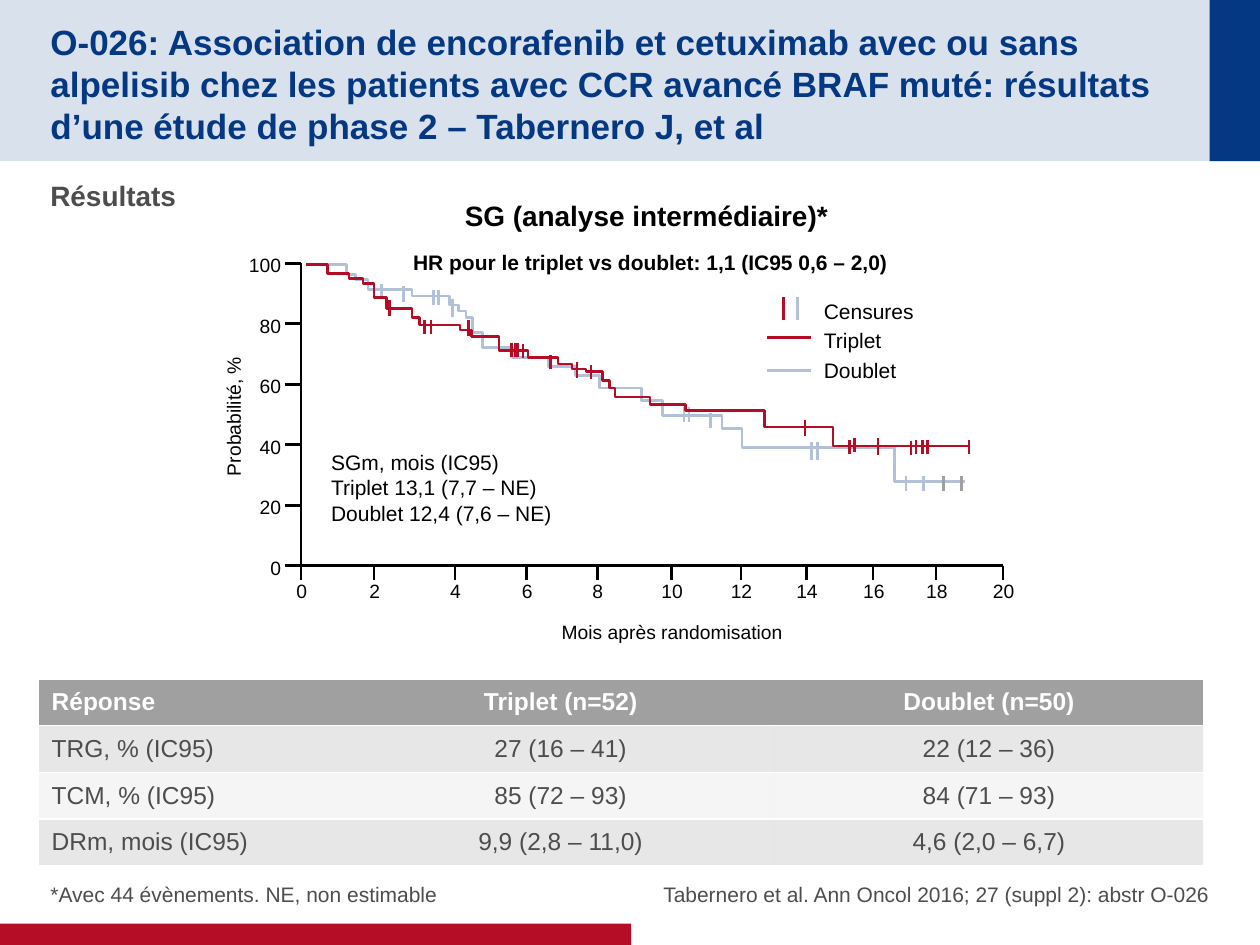
from lxml.etree import SubElement, Element
from pptx import Presentation
from pptx.dml.color import RGBColor
from pptx.enum.shapes import MSO_CONNECTOR, MSO_SHAPE
from pptx.enum.text import MSO_ANCHOR, PP_ALIGN
from pptx.oxml.ns import qn
from pptx.util import Cm, Pt

NAVY = RGBColor(0x04, 0x38, 0x82)
RED = RGBColor(0xB6, 0x0D, 0x27)
PALE_BLUE = RGBColor(0xB2, 0xC0, 0xD8)
GREY = RGBColor(0xA0, 0xA0, 0xA0)
DARK_GREY = RGBColor(0x4D, 0x4D, 0x4D)
BLACK = RGBColor(0, 0, 0)
WHITE = RGBColor(0xFF, 0xFF, 0xFF)

AXIS_LEFT, AXIS_TOP, AXIS_BOTTOM = 2.39, 2.09, 4.49
MONTH_TICKS = [2.39, 2.97, 3.61, 4.18, 4.74, 5.33, 5.88, 6.4, 6.93, 7.43, 7.96]
CURVE_START = (2.43, 2.1)

DOUBLET_STEPS = [
    (2.75, 2.18), (2.82, 2.22), (2.92, 2.3), (3.27, 2.35), (3.57, 2.42),
    (3.64, 2.47), (3.7, 2.52), (3.75, 2.64), (3.83, 2.76), (4.07, 2.84),
    (4.35, 2.91), (4.57, 2.98), (4.76, 3.08), (5.09, 3.18), (5.26, 3.3),
    (5.73, 3.4), (5.89, 3.55), (7.1, 3.82)]
TRIPLET_STEPS = [
    (2.6, 2.17), (2.77, 2.21), (2.88, 2.25), (2.97, 2.36), (3.07, 2.45),
    (3.27, 2.52), (3.33, 2.58), (3.65, 2.62), (3.74, 2.67), (3.96, 2.78),
    (4.19, 2.84), (4.43, 2.89), (4.54, 2.93), (4.65, 2.95), (4.78, 3.02),
    (4.84, 3.08), (4.88, 3.15), (5.16, 3.21), (5.44, 3.26), (6.07, 3.39),
    (6.61, 3.54)]

DOUBLET_CENSORS = {
    (2.25, 2.37): [3.03], (2.27, 2.4): [3.2], (2.3, 2.42): [3.44, 3.48],
    (2.37, 2.52): [3.59], (3.23, 3.35): [5.43, 5.47], (3.28, 3.4): [5.64],
    (3.51, 3.65): [6.44, 6.49], (3.78, 3.9): [7.19, 7.33]}
LATE_CENSORS = {(3.78, 3.9): [7.49, 7.63]}
TRIPLET_CENSORS = {
    (2.38, 2.51): [3.09], (2.54, 2.65): [3.37, 3.42], (2.54, 2.67): [3.72],
    (2.72, 2.83): [4.06, 4.09, 4.11], (2.73, 2.84): [4.15],
    (2.82, 2.93): [4.37], (2.87, 3): [4.58], (2.9, 3.01): [4.69],
    (3.33, 3.46): [6.39], (3.48, 3.59): [6.78], (3.48, 3.61): [6.97],
    (3.49, 3.6): [6.74, 7.27, 7.32, 7.36, 7.69], (3.5, 3.61): [7.23]}

RESPONSES = [
    ("Réponse", "Triplet (n=52)", "Doublet (n=50)"),
    ("TRG, % (IC95)", "27 (16 – 41)", "22 (12 – 36)"),
    ("TCM, % (IC95)", "85 (72 – 93)", "84 (71 – 93)"),
    ("DRm, mois (IC95)", "9,9 (2,8 – 11,0)", "4,6 (2,0 – 6,7)")]


def length(inches):
    return Cm(inches * 2.54)


def write(frame, text, size=11, color=BLACK, bold=False, align=PP_ALIGN.LEFT,
          spacing=None, before=None, after=None):
    for index, line in enumerate(text.split("\n")):
        paragraph = frame.add_paragraph() if index else frame.paragraphs[0]
        paragraph.alignment = align
        paragraph.line_spacing = spacing
        paragraph.space_before = before
        paragraph.space_after = after
        run = paragraph.add_run()
        run.text = line
        run.font.name = "Arial"
        run.font.size = Pt(size)
        run.font.bold = bold
        run.font.color.rgb = color


def paint(fill, properties, color, opacity):
    fill.solid()
    fill.fore_color.rgb = color
    if opacity < 100:
        color_element = properties.find(qn("a:solidFill"))[0]
        SubElement(color_element, qn("a:alpha"), val=str(opacity * 1000))


class SlideBuilder:
    def __init__(self, slide, line_width=1.5):
        self.slide = slide
        self.shapes = slide.shapes
        self.line_width = Pt(line_width)

    def rectangle(self, left, top, width, height, color, opacity=100):
        shape = self.shapes.add_shape(
            MSO_SHAPE.RECTANGLE, *map(length, (left, top, width, height)))
        shape.shadow.inherit = False
        shape.line.fill.background()
        paint(shape.fill, shape._element.spPr, color, opacity)

    def text(self, left, top, width, height, text, anchor=MSO_ANCHOR.TOP,
             insets=(0.1, 0.05, 0.1, 0.05), wrap=False, rotation=0, **style):
        shape = self.shapes.add_textbox(*map(length, (left, top, width, height)))
        shape.rotation = rotation
        frame = shape.text_frame
        frame.word_wrap = wrap
        frame.vertical_anchor = anchor
        (frame.margin_left, frame.margin_top,
         frame.margin_right, frame.margin_bottom) = map(length, insets)
        write(frame, text, **style)

    def line(self, start_x, start_y, end_x, end_y, color=BLACK):
        connector = self.shapes.add_connector(
            MSO_CONNECTOR.STRAIGHT, *map(length, (start_x, start_y, end_x, end_y)))
        connector.line.color.rgb = color
        connector.line.width = self.line_width
        SubElement(connector._element.spPr, qn("a:effectLst"))

    def outline(self, points, color=BLACK):
        start, *others = [(length(x), length(y)) for x, y in points]
        builder = self.shapes.build_freeform(*start)
        builder.add_line_segments(others, close=False)
        shape = builder.convert_to_shape()
        shape.shadow.inherit = False
        shape.fill.background()
        shape.line.color.rgb = color
        shape.line.width = self.line_width

    def survival_curve(self, steps, end, color):
        points = [CURVE_START]
        for x, y in steps:
            points += [(x, points[-1][1]), (x, y)]
        self.outline(points + [(end, points[-1][1])], color)

    def censors(self, marks, color):
        for (top, bottom), positions in marks.items():
            for x in positions:
                self.line(x, top, x, bottom, color)

    def borders(self, cell):
        properties = cell._tc.get_or_add_tcPr()
        for index, side in enumerate(("lnL", "lnR", "lnT", "lnB")):
            border = Element(qn(f"a:{side}"), w=str(Pt(1)))
            if side in ("lnL", "lnR"):
                SubElement(border, qn("a:noFill"))
            else:
                fill = SubElement(border, qn("a:solidFill"))
                SubElement(fill, qn("a:srgbClr"), val=str(WHITE))
            properties.insert(index, border)

    def table(self, left, top, widths, row_height, rows):
        table = self.shapes.add_table(
            len(rows), len(widths), length(left), length(top),
            length(sum(widths)), length(row_height * len(rows))).table
        table.horz_banding = False
        for column, width in zip(table.columns, widths):
            column.width = length(width)
        for row_index, values in enumerate(rows):
            header = row_index == 0
            opacity = 100 if header else (10, 25)[row_index % 2]
            for column_index, value in enumerate(values):
                cell = table.cell(row_index, column_index)
                cell.vertical_anchor = MSO_ANCHOR.MIDDLE
                write(cell.text_frame, value, size=14, bold=header,
                      color=WHITE if header else DARK_GREY, before=Pt(2.8),
                      align=PP_ALIGN.CENTER if column_index else PP_ALIGN.LEFT)
                paint(cell.fill, cell._tc.get_or_add_tcPr(), GREY, opacity)
                self.borders(cell)


def draw_axes(builder):
    builder.outline([(AXIS_LEFT, AXIS_TOP), (AXIS_LEFT, AXIS_BOTTOM),
                     (MONTH_TICKS[-1], AXIS_BOTTOM)])
    for index in range(6):
        y = AXIS_TOP + 0.48 * index
        builder.line(2.26, y, AXIS_LEFT, y)
        builder.text(1.87, y - 0.13, 0.46, 0.29, str(100 - 20 * index),
                     anchor=MSO_ANCHOR.MIDDLE, align=PP_ALIGN.RIGHT)
    for index, x in enumerate(MONTH_TICKS):
        builder.line(x, AXIS_BOTTOM, x, AXIS_BOTTOM + 0.11)
        builder.text(x - 0.18, 4.55, 0.37, 0.29, str(2 * index), align=PP_ALIGN.CENTER)
    builder.text(1.28, 3.16, 1.15, 0.29, "Probabilité, %", rotation=270,
                 align=PP_ALIGN.CENTER)
    builder.text(4.35, 4.87, 1.97, 0.29, "Mois après randomisation",
                 align=PP_ALIGN.CENTER)


def draw_survival(builder):
    draw_axes(builder)
    builder.text(6.44, 2.28, 0.92, 0.81, "Censures\nTriplet\nDoublet", size=12,
                 spacing=Pt(17))
    builder.text(2.53, 3.52, 1.97, 0.71, "SGm, mois (IC95)\nTriplet 13,1 (7,7 – NE)\n"
                 "Doublet 12,4 (7,6 – NE)", size=12)
    for color, y, x in ((RED, 2.68, 6.22), (PALE_BLUE, 2.94, 6.33)):
        builder.line(6.09, y, 6.44, y, color)
        builder.line(x, 2.36, x, 2.54, color)
    builder.censors(DOUBLET_CENSORS, PALE_BLUE)
    builder.survival_curve(DOUBLET_STEPS, 7.66, PALE_BLUE)
    builder.censors(LATE_CENSORS, GREY)
    builder.censors(TRIPLET_CENSORS, RED)
    builder.survival_curve(TRIPLET_STEPS, 7.68, RED)
    builder.text(3.18, 1.93, 4.02, 0.3,
                 "HR pour le triplet vs doublet: 1,1 (IC95 0,6 – 2,0)", size=12, bold=True)
    builder.text(2.39, 1.52, 5.48, 0.37, "SG (analyse intermédiaire)*", size=16,
                 bold=True, wrap=True, anchor=MSO_ANCHOR.MIDDLE, align=PP_ALIGN.CENTER)


def main():
    presentation = Presentation()
    presentation.slide_width, presentation.slide_height = length(10), length(7.5)
    builder = SlideBuilder(presentation.slides.add_slide(presentation.slide_layouts[6]))
    builder.rectangle(0, 0, 10, 1.28, NAVY, opacity=15)
    builder.rectangle(9.6, 0, 0.4, 1.28, NAVY)
    builder.rectangle(0, 7.33, 5.01, 0.17, RED)
    builder.text(0.4, 0.2, 9.01, 0.88,
                 "O-026: Association de encorafenib et cetuximab avec ou sans alpelisib "
                 "chez les patients avec CCR avancé BRAF muté: résultats d’une étude de "
                 "phase 2 – Tabernero J, et al", size=20, color=NAVY, bold=True, wrap=True,
                 anchor=MSO_ANCHOR.MIDDLE, insets=(0, 0.05, 0, 0))
    builder.text(0.4, 1.37, 9.2, 5.19, "Résultats", size=16, color=DARK_GREY, bold=True,
                 wrap=True, insets=(0, 0.05, 0, 0.05), after=Pt(4))
    for left, align, note in (
            (0.4, PP_ALIGN.LEFT, "*Avec 44 évènements. NE, non estimable"),
            (5.08, PP_ALIGN.RIGHT,
             "Tabernero et al. Ann Oncol 2016; 27 (suppl 2): abstr O-026")):
        builder.text(left, 6.67, 4.52, 0.53, note, size=12, color=DARK_GREY, wrap=True,
                     anchor=MSO_ANCHOR.BOTTOM, insets=(0, 0, 0, 0), align=align, after=Pt(4))
    builder.table(0.31, 5.39, (2.44, 3.4, 3.4), 0.37, RESPONSES)
    draw_survival(builder)
    presentation.save("out.pptx")


if __name__ == "__main__":
    main()
